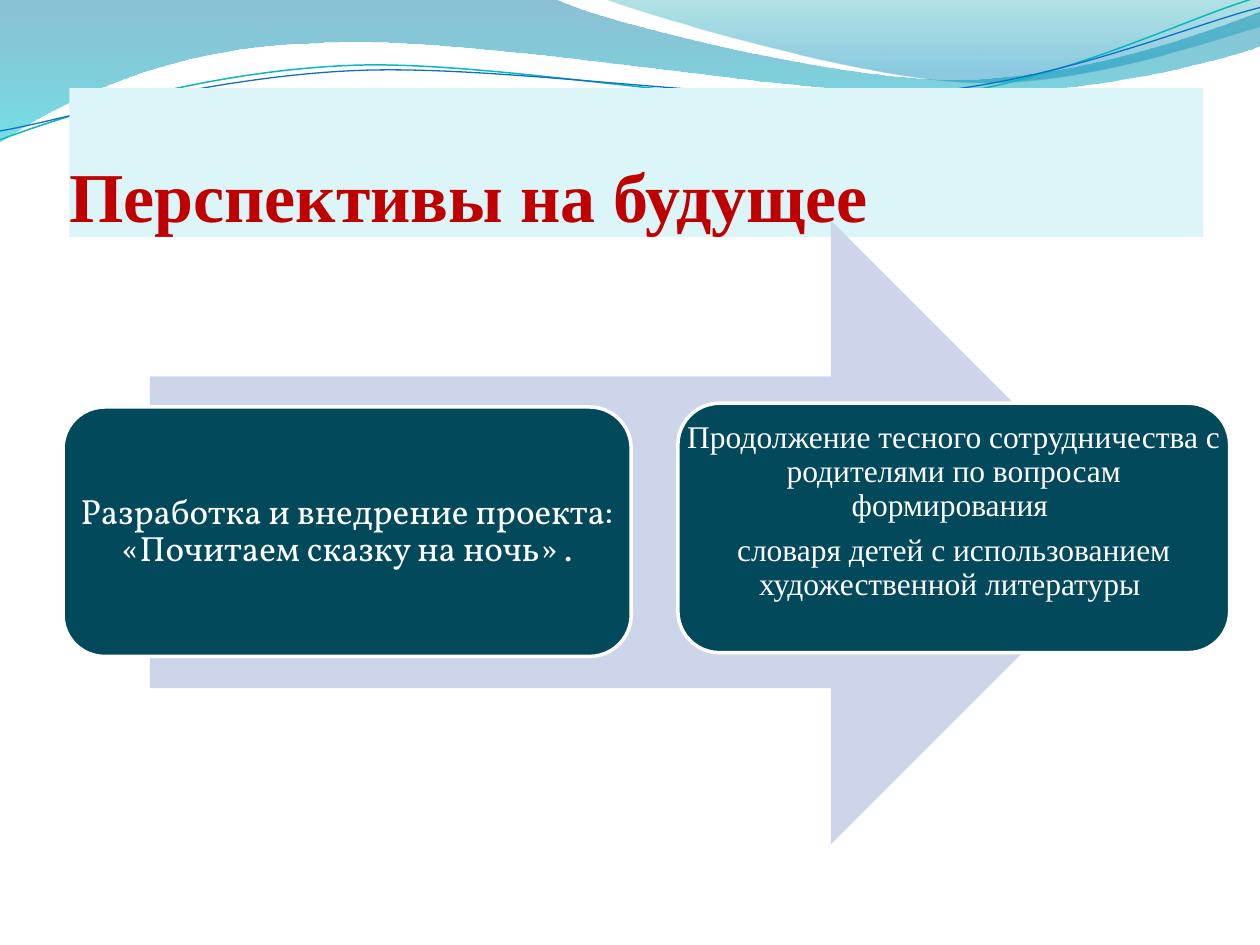
from dataclasses import dataclass
from typing import Any, Optional

from lxml.etree import SubElement
from pptx import Presentation
from pptx.dml.color import RGBColor
from pptx.enum.shapes import MSO_SHAPE as Preset
from pptx.enum.text import MSO_ANCHOR as Anchor, MSO_AUTO_SIZE as AutoSize, PP_ALIGN as Align
from pptx.oxml.ns import qn
from pptx.util import Inches, Pt

Point = tuple[float, float]


@dataclass(frozen=True)
class Theme:
    """Colours, fonts and type sizes of the slide."""
    title_fill: str = "DBF5F9"
    title_text: str = "C00000"
    arrow: str = "CCD5EA"
    card: str = "03495C"
    white: str = "FFFFFF"
    serif: str = "Times New Roman"
    accent: str = "Vollkorn"
    title_size: float = 40
    accent_size: float = 20
    serif_size: float = 18
    card_line: float = 2


@dataclass(frozen=True)
class Stop:
    """One gradient stop, with its opacity in percent."""
    position: float
    color: str
    opacity: int


@dataclass(frozen=True)
class Wave:
    """An outline whose segments hold one line point or three curve points."""
    start: Point
    segments: list[list[Point]]
    stops: tuple[Stop, ...] = ()
    line: str = ""
    width: float = 0


@dataclass(frozen=True)
class Card:
    """A rounded card with centred paragraphs."""
    left: float
    top: float
    width: float
    texts: list[str]
    font: str
    size: float
    inset: float
    bottom_inset: float
    height: float = 1.98


THEME = Theme()

WAVES = [
    Wave((0, 0), [
        [(4.4, -0.01)],
        [(4.76, 0.17), (6.64, 0.63), (7.58, 0.63)],
        [(8.53, 0.63), (9.58, 0.26), (10, 0.09)],
        [(10.01, 0.36)],
        [(9.83, 0.44), (8.7, 0.76), (7.46, 0.75)],
        [(6.22, 0.75), (3.82, 0.28), (2.57, 0.34)],
        [(1.29, 0.36), (0.46, 0.83), (-0.01, 1.13)],
    ], stops=(Stop(0, "0074A1", 45), Stop(1, "00C6CF", 55))),
    Wave((4.79, -0.01), [
        [(5.09, 0.11), (6.82, 0.62), (7.69, 0.65)],
        [(8.56, 0.69), (9.61, 0.32), (10, 0.21)],
        [(10, 0)],
    ], stops=(Stop(0, "00A1A9", 30), Stop(0.8, "008BBF", 45))),
    Wave((0, 1.11), [
        [(0.48, 0.93), (1.58, 0.57), (2.77, 0.52)],
        [(3.95, 0.47), (5.93, 0.89), (7.13, 0.8)],
        [(8.33, 0.71), (9.38, 0.15), (9.98, -0.02)],
    ], line="0AB8BF", width=0.85),
    Wave((0, 1.04), [
        [(0.47, 0.96), (1.64, 0.61), (2.83, 0.56)],
        [(4.03, 0.51), (5.97, 0.84), (7.17, 0.75)],
        [(8.36, 0.67), (9.41, 0.21), (10, 0.06)],
    ], line="0F6FC6", width=0.75),
]

CARDS = [
    Card(0.5, 3.23, 4.51,
         ["Разработка и внедрение проекта: «Почитаем сказку на ночь» ."],
         THEME.accent, THEME.accent_size, 0.08, 0.08),
    Card(5.38, 3.2, 4.38,
         ["Продолжение тесного сотрудничества с родителями по вопросам формирования ",
          "словаря детей с использованием художественной литературы "],
         THEME.serif, THEME.serif_size, 0.07, 0.32),
]


def apply(target: Any, values: dict[str, Any]) -> None:
    """Set every named attribute on the target."""
    for name, value in values.items():
        setattr(target, name, value)


def paint(shape: Any, fill: Optional[str], line: str = "", width: float = 0) -> None:
    """Give a shape its fill and line, without a shadow."""
    shape.shadow.inherit = False
    if fill:
        shape.fill.solid()
        shape.fill.fore_color.rgb = RGBColor.from_string(fill)
    else:
        shape.fill.background()
    if line:
        shape.line.color.rgb = RGBColor.from_string(line)
        shape.line.width = Pt(width)
    else:
        shape.line.fill.background()


def write(para: Any, text: str, font: str, size: float, color: str, bold: bool = False) -> None:
    """Add one formatted run to a paragraph."""
    span = para.add_run()
    span.text = text
    apply(span.font, {"name": font, "size": Pt(size), "bold": bold})
    span.font.color.rgb = RGBColor.from_string(color)


def bend(shape: Any, segments: list[list[Point]]) -> None:
    """Turn each run of three line points into one cubic curve."""
    outline = next(shape._element.iter(qn("a:path")))
    lines = iter(outline.findall(qn("a:lnTo")))
    for segment in segments:
        steps = [next(lines) for _ in segment]
        if len(steps) == 3:
            curve = outline.makeelement(qn("a:cubicBezTo"))
            steps[0].addprevious(curve)
            for step in steps:
                curve.append(step[0])
                outline.remove(step)


def draw_wave(page: Any, wave: Wave) -> None:
    """Draw a gradient area or an open curved line."""
    points = [wave.start] + [point for segment in wave.segments for point in segment]
    corners = [(Inches(x), Inches(y)) for x, y in points]
    builder = page.shapes.build_freeform(*corners[0])
    builder.add_line_segments(corners[1:], close=bool(wave.stops))
    shape = builder.convert_to_shape()
    bend(shape, wave.segments)
    paint(shape, None, wave.line, wave.width)
    if wave.stops:
        shape.fill.gradient()
        shape.fill.gradient_angle = 270
        for target, stop in zip(shape.fill.gradient_stops, wave.stops):
            target.position = stop.position
            target.color.rgb = RGBColor.from_string(stop.color)
        colors = list(shape._element.spPr.iter(qn("a:srgbClr")))
        for color, stop in zip(colors, wave.stops):
            SubElement(color, qn("a:alpha")).set("val", str(stop.opacity * 1000))


def draw_title(page: Any, text: str) -> None:
    """Format the title placeholder and lift it above the waves."""
    title = page.shapes.title
    apply(title, {"left": Inches(0.55), "top": Inches(0.7), "width": Inches(9), "height": Inches(1.18)})
    paint(title, THEME.title_fill)
    apply(title.text_frame, {"vertical_anchor": Anchor.BOTTOM, "auto_size": AutoSize.NONE,
                             "word_wrap": True, "margin_left": 0, "margin_right": 0,
                             "margin_top": Inches(0.05), "margin_bottom": 0})
    para = title.text_frame.paragraphs[0]
    para.alignment = Align.LEFT
    write(para, text, THEME.serif, THEME.title_size, THEME.title_text, bold=True)
    page.shapes._spTree.append(title._element)


def draw_card(page: Any, card: Card) -> None:
    """Draw one rounded card and the full-width text box on it."""
    area = [Inches(value) for value in (card.left, card.top, card.width, card.height)]
    box = page.shapes.add_shape(Preset.ROUNDED_RECTANGLE, *area)
    paint(box, THEME.card, THEME.white, THEME.card_line)
    inset = Inches(card.inset)
    frame = page.shapes.add_textbox(*area).text_frame
    apply(frame, {"word_wrap": True, "vertical_anchor": Anchor.MIDDLE, "margin_left": inset,
                  "margin_right": inset, "margin_top": inset,
                  "margin_bottom": Inches(card.bottom_inset)})
    for index, text in enumerate(card.texts):
        para = frame.add_paragraph() if index else frame.paragraphs[0]
        apply(para, {"alignment": Align.CENTER, "line_spacing": 0.9, "space_after": Pt(card.size * 0.35)})
        write(para, text, card.font, card.size, THEME.white)


def main() -> None:
    """Build and save the slide."""
    deck = Presentation()
    apply(deck, {"slide_width": Inches(10), "slide_height": Inches(7.5)})
    page = deck.slides.add_slide(deck.slide_layouts[5])
    for wave in WAVES:
        draw_wave(page, wave)
    draw_title(page, "Перспективы на будущее")
    arrow = page.shapes.add_shape(Preset.RIGHT_ARROW, Inches(1.19), Inches(1.75), Inches(7.88), Inches(4.95))
    paint(arrow, THEME.arrow)
    for card in CARDS:
        draw_card(page, card)
    deck.save("out.pptx")


if __name__ == "__main__":
    main()
